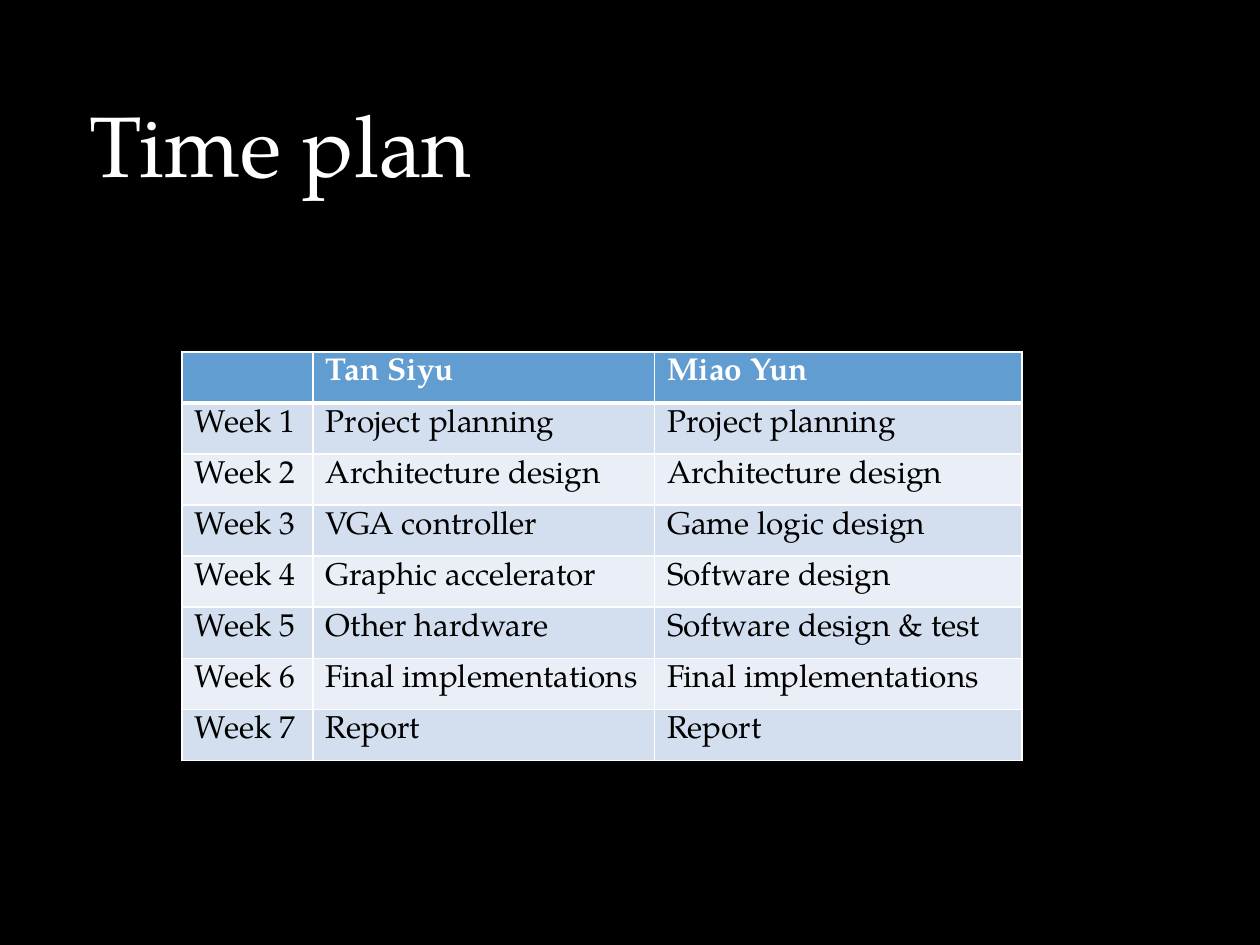
"""Build a time plan slide with a weekly task table for two people."""
import pptx
import pptx.dml.color
import pptx.enum.text
import pptx.oxml
import pptx.oxml.ns
import pptx.util
from dataclasses import dataclass

Pt = pptx.util.Pt
RGB = pptx.dml.color.RGBColor.from_string


@dataclass
class Theme:
    font: str = "TeX Gyre Pagella"
    back: str = "000000"
    light: str = "FFFFFF"
    dark: str = "000000"
    head: str = "629DD1"
    odd: str = "D3DFEE"
    even: str = "EAEFF7"
    title: int = 49
    body: int = 18


theme = Theme()


def style(frame, size, color, bold=False):
    for para in frame.paragraphs:
        for run in para.runs:
            run.font.name = theme.font
            run.font.size = Pt(size)
            run.font.bold = bold
            run.font.color.rgb = RGB(color)


def border(cell, side, width):
    line = pptx.oxml.parse_xml(
        f'<a:ln{side} {pptx.oxml.ns.nsdecls("a")} w="{Pt(width)}"><a:solidFill>'
        f'<a:srgbClr val="{theme.light}"/></a:solidFill></a:ln{side}>'
    )
    cell._tc.get_or_add_tcPr().append(line)


deck = pptx.Presentation()
deck.slide_width, deck.slide_height = Pt(720), Pt(540)
slide = deck.slides.add_slide(deck.slide_layouts[5])
slide.background.fill.solid()
slide.background.fill.fore_color.rgb = RGB(theme.back)

title = slide.shapes.title
title.left, title.top, title.width, title.height = Pt(44), Pt(39), Pt(594), Pt(72)
frame = title.text_frame
frame.text = "Time plan"
frame.word_wrap = True
frame.auto_size = pptx.enum.text.MSO_AUTO_SIZE.NONE
frame.vertical_anchor = pptx.enum.text.MSO_ANCHOR.BOTTOM
frame.margin_bottom = 0
frame.paragraphs[0].alignment = pptx.enum.text.PP_ALIGN.LEFT
style(frame, theme.title, theme.light)

tasks = [
    ("Project planning", "Project planning"),
    ("Architecture design", "Architecture design"),
    ("VGA controller", "Game logic design"),
    ("Graphic accelerator", "Software design"),
    ("Other hardware", "Software design & test"),
    ("Final implementations", "Final implementations"),
    ("Report", "Report"),
]
rows = [("", "Tan Siyu", "Miao Yun")]
rows += [(f"Week {week}", *pair) for week, pair in enumerate(tasks, 1)]
widths = [75, 195, 210]
pitch = 29.2

table = slide.shapes.add_table(
    len(rows), len(widths), Pt(104), Pt(201), Pt(sum(widths)), Pt(pitch * len(rows))
).table
for col, width in zip(table.columns, widths):
    col.width = Pt(width)

for i, row in enumerate(rows):
    table.rows[i].height = Pt(pitch)
    fill = theme.head if i == 0 else theme.odd if i % 2 else theme.even
    for j, text in enumerate(row):
        cell = table.cell(i, j)
        cell.text_frame.text = text
        style(cell.text_frame, theme.body, theme.dark if i else theme.light, i == 0)
        for side in "LRTB":
            thick = (i, side) in [(0, "B"), (1, "T")]
            border(cell, side, 3 if thick else 1)
        cell.fill.solid()
        cell.fill.fore_color.rgb = RGB(fill)

deck.save("out.pptx")
